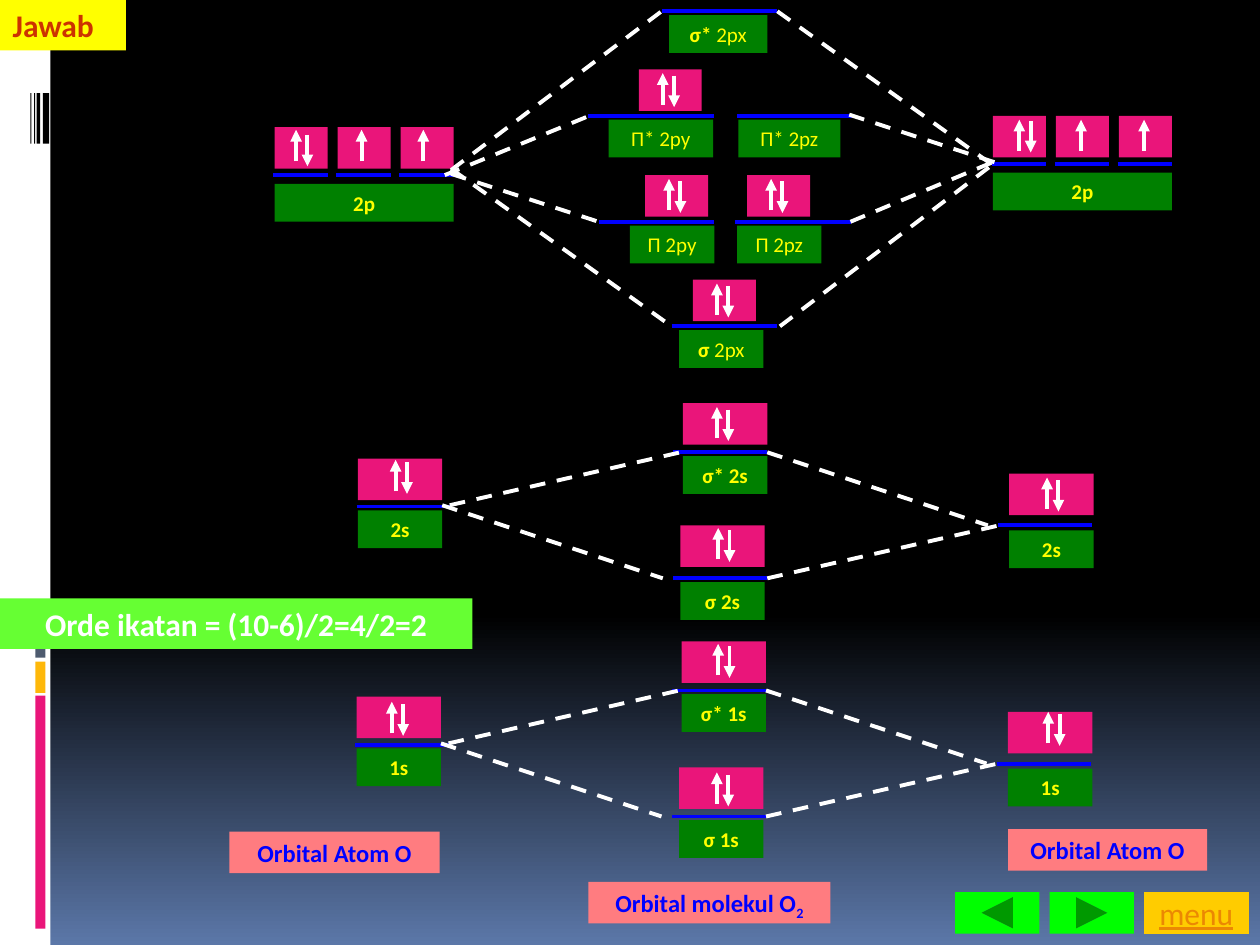
from lxml import etree
from pptx import Presentation
from pptx.dml.color import RGBColor
from pptx.enum import dml, shapes, text
from pptx.oxml.ns import qn
from pptx.util import Inches, Pt

BLACK = RGBColor(0x00, 0x00, 0x00)
WHITE = RGBColor(0xFF, 0xFF, 0xFF)
SKY = RGBColor(0x5B, 0x77, 0xA8)
BLUE = RGBColor(0x00, 0x00, 0xFF)
PINK = RGBColor(0xEA, 0x15, 0x7A)
AMBER = RGBColor(0xFE, 0xB8, 0x0A)
SLATE = RGBColor(0x4E, 0x5B, 0x6F)
GREEN = RGBColor(0x00, 0x80, 0x00)
LIME = RGBColor(0x66, 0xFF, 0x33)
BUTTON = RGBColor(0x00, 0xFF, 0x00)
GOLD = RGBColor(0xFF, 0xCC, 0x00)
ORANGE = RGBColor(0xEB, 0x88, 0x03)
YELLOW = RGBColor(0xFF, 0xFF, 0x00)
SALMON = RGBColor(0xFF, 0x7C, 0x80)
RUST = RGBColor(0xCC, 0x33, 0x00)

SHAPE = shapes.MSO_SHAPE
CENTER, LEFT = text.PP_ALIGN.CENTER, text.PP_ALIGN.LEFT
FRAME = {"word_wrap": True, "vertical_anchor": text.MSO_ANCHOR.TOP,
         "auto_size": text.MSO_AUTO_SIZE.SHAPE_TO_FIT_TEXT}
TITLE_FRAME = {**FRAME, "auto_size": text.MSO_AUTO_SIZE.NONE}
LABEL = {"name": "Calibri", "size": Pt(12), "bold": True}
CAPTION = {**LABEL, "size": Pt(14)}
HEADING = {**LABEL, "size": Pt(18)}
MENU = {**HEADING, "bold": False, "underline": True}


def apply(target, values):
    for name, value in values.items():
        setattr(target, name, value)


def write(sp, runs, style, colour, align=CENTER, frame=FRAME):
    """Fill a shape with runs, each a (text, overrides) pair."""
    tf = sp.text_frame
    apply(tf, frame)
    p = tf.paragraphs[0]
    p.alignment = align
    for words, changes in runs:
        r = p.add_run()
        r.text = words
        apply(r.font, {**style, **changes})
        r.font.color.rgb = colour


def box(s, x, y, w, h, fill, kind=SHAPE.RECTANGLE):
    sp = s.shapes.add_shape(kind, Inches(x), Inches(y), Inches(w), Inches(h))
    sp.shadow.inherit = False
    sp.fill.solid()
    sp.fill.fore_color.rgb = fill
    sp.line.fill.background()
    return sp


def line(s, x1, y1, x2, y2, colour=WHITE, dash=None, arrow=False):
    c = s.shapes.add_connector(shapes.MSO_CONNECTOR.STRAIGHT,
                               Inches(x1), Inches(y1), Inches(x2), Inches(y2))
    c.line.color.rgb = colour
    apply(c.line, {"width": Pt(2.25), "dash_style": dash})
    spPr = c.element.spPr
    if arrow:
        etree.SubElement(spPr.find(qn("a:ln")), qn("a:tailEnd"), type="triangle")
    etree.SubElement(spPr, qn("a:effectLst"))


def dashes(s, x, y, ends):
    for x1, y1, x2, y2 in ends:
        line(s, x + x1, y + y1, x + x2, y + y2, dash=dml.MSO_LINE.DASH)


def electrons(s, x, y, paired=True, drop=0.02):
    line(s, x, y + 0.25, x, y, arrow=True)
    if paired:
        line(s, x + 0.09, y + drop, x + 0.09, y + drop + 0.25, arrow=True)


def level(s, x, y, w):
    line(s, x, y, x + w, y, colour=BLUE)


def label(s, x, y, w, runs):
    write(box(s, x, y, w, 0.3, GREEN), runs, LABEL, YELLOW)


def side_strip(s):
    bars = [(0, 0, 0.4, 7.5, WHITE), (0.28, 5.52, 0.08, 1.85, PINK),
            (0.28, 5.25, 0.08, 0.25, AMBER), (0.28, 5.07, 0.08, 0.15, SLATE)]
    bars += [(x, 0.74, w, 0.4, BLACK) for x, w in
             [(0.34, 0.05), (0.29, 0.03), (0.27, 0.01), (0.24, 0.01)]]
    for bar in bars:
        box(s, *bar)


def s_diagram(s, x, y, name, bonding_cell, spins):
    # level, label and cell offsets: antibonding, bonding, left atom, right atom
    parts = [("σ* " + name, 2.51, 0, 2.59, 0.03, -0.39),
             ("σ " + name, 2.51, 1, 2.57, 1.03, bonding_cell),
             (name, 0, 0.43, 0.01, 0.46, 0.05),
             (name, 5.09, 0.58, 5.18, 0.62, 0.17)]
    for (words, lx, ly, bx, by, cy), (sx, sy) in zip(parts, spins):
        level(s, x + lx, y + ly, 0.75)
        label(s, x + bx, y + by, 0.67, [(words, {})])
        box(s, x + bx, y + cy, 0.67, 0.33, PINK)
        electrons(s, x + sx, y + sy)
    dashes(s, x, y, [(0.74, 0.42, 2.57, 0), (3.26, 1, 5.1, 0.58),
                     (0.68, 0.42, 2.43, 1), (3.26, 0, 5.01, 0.58)])


def p_atom(s, x, y, spin_x, spin_y, drop):
    for i, sx in enumerate(spin_x):
        level(s, x - 0.01 + 0.5 * i, y, 0.43)
        box(s, x + 0.5 * i, y - 0.38, 0.42, 0.33, PINK)
        electrons(s, x + sx, y + spin_y, paired=i == 0, drop=drop)
    label(s, x, y + 0.07, 1.42, [("2p", {})])


def p_molecule(s, x, y):
    plain = {"bold": False}
    # runs, level x, y, width, label x, width, cell x
    orbitals = [
        ([("σ* ", {}), ("2px", plain)], 0.58, 0, 0.92, 0.64, 0.78, None),
        ([("Π* 2py", plain)], 0, 0.83, 1, 0.16, 0.83, 0.4),
        ([("Π* 2pz", plain)], 1.18, 0.83, 0.91, 1.19, 0.81, None),
        ([("Π 2py", plain)], 0.08, 1.67, 0.92, 0.33, 0.67, 0.45),
        ([("Π 2pz", plain)], 1.16, 1.67, 0.92, 1.18, 0.67, 1.26),
        ([("σ", {}), (" 2px", plain)], 0.66, 2.5, 0.84, 0.72, 0.67, 0.83)]
    for runs, lx, ly, lw, bx, bw, cx in orbitals:
        level(s, x + lx, y + ly, lw)
        label(s, x + bx, y + ly + 0.03, bw, runs)
        if cx is not None:
            box(s, x + cx, y + ly - 0.37, 0.5, 0.33, PINK)
            electrons(s, x + cx + 0.19, y + ly - 0.34)
    dashes(s, x, y, [
        (-1.09, 1.26, 0.58, 0), (1.52, 2.5, 3.19, 1.23),
        (-1.14, 1.3, 0.03, 0.82), (2.08, 1.67, 3.25, 1.18),
        (-1.09, 1.29, 0.08, 1.67), (2.07, 0.82, 3.23, 1.2),
        (-1.09, 1.25, 0.66, 2.5), (1.5, 0, 3.25, 1.25)])


def captions(s):
    atom = [("Orbital Atom O", {})]
    molecule = [("Orbital molekul O", {}), ("2", {})]
    for x, y, w, runs in [(1.82, 6.6, 1.67, atom), (8, 6.58, 1.58, atom),
                          (4.67, 7, 1.92, molecule)]:
        sp = box(s, x, y, w, 0.33, SALMON)
        write(sp, runs, CAPTION, BLUE)
    # Subscript on the last run of the molecule caption
    list(sp.element.iter(qn("a:rPr")))[-1].set("baseline", "-25000")
    write(box(s, 0, 4.75, 3.75, 0.4, LIME),
          [("Orde ikatan = (10-6)/2=4/2=2", {})], HEADING, WHITE)


def navigation(s, x, y):
    box(s, x + 0.75, y, 0.67, 0.33, BUTTON, SHAPE.ACTION_BUTTON_FORWARD_OR_NEXT)
    box(s, x, y, 0.67, 0.33, BUTTON, SHAPE.ACTION_BUTTON_BACK_OR_PREVIOUS)
    sp = box(s, x + 1.5, y, 0.83, 0.33, GOLD, SHAPE.ACTION_BUTTON_CUSTOM)
    write(sp, [("menu", {})], MENU, ORANGE,
          frame={"word_wrap": False, "vertical_anchor": text.MSO_ANCHOR.MIDDLE})


def title(s, x, y, w, h):
    sp = s.shapes.title
    apply(sp, {"left": Inches(x), "top": Inches(y),
               "width": Inches(w), "height": Inches(h)})
    sp.fill.solid()
    sp.fill.fore_color.rgb = YELLOW
    write(sp, [("Jawab", {})], HEADING, RUST, align=LEFT, frame=TITLE_FRAME)
    # Bring the title in front of the side strip
    sp.element.getparent().append(sp.element)


def background(s):
    fill = s.background.fill
    fill.gradient()
    fill.gradient_angle = 270
    for stop, position, colour in zip(fill.gradient_stops, (0.65, 1), (BLACK, SKY)):
        stop.position = position
        stop.color.rgb = colour


def main():
    prs = Presentation()
    prs.slide_width, prs.slide_height = Inches(10), Inches(7.5)
    s = prs.slides.add_slide(prs.slide_layouts[5])
    background(s)
    side_strip(s)
    p_atom(s, 2.18, 1.39, (0.17, 0.69, 1.18), -0.36, 0.04)
    p_atom(s, 7.88, 1.3, (0.21, 0.7, 1.2), -0.35, 0.01)
    p_molecule(s, 4.67, 0.09)
    s_diagram(s, 2.83, 3.59, "2s", 0.58,
              [(2.86, -0.36), (2.87, 0.6), (0.31, 0.06), (5.48, 0.2)])
    s_diagram(s, 2.82, 5.48, "1s", 0.61,
              [(2.88, -0.37), (2.87, 0.65), (0.29, 0.09), (5.5, 0.17)])
    captions(s)
    navigation(s, 7.58, 7.08)
    title(s, 0, 0, 1, 0.4)
    prs.save("out.pptx")


if __name__ == "__main__":
    main()
